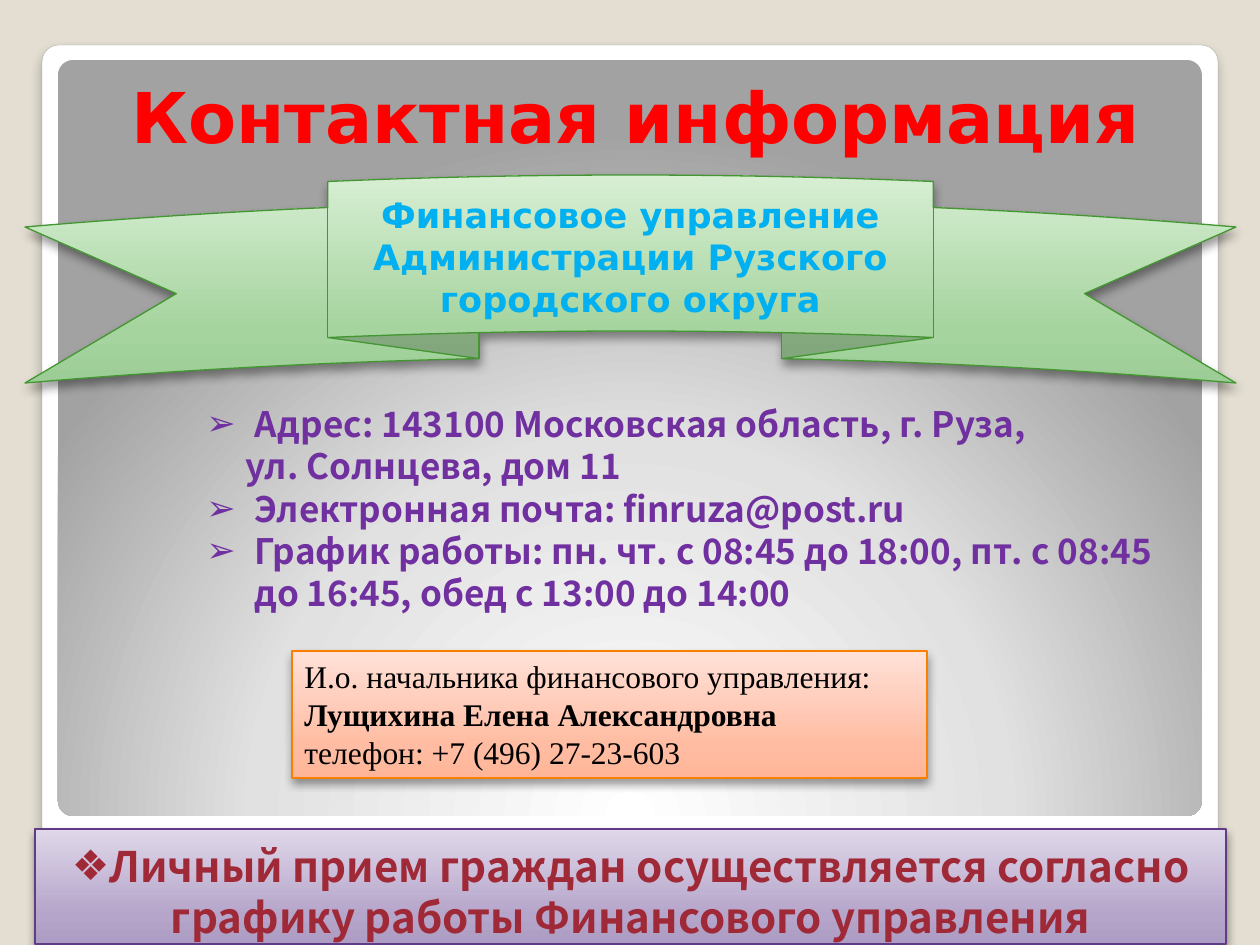
from lxml.etree import SubElement
from pptx import Presentation
from pptx.dml.color import RGBColor
from pptx.enum.shapes import MSO_SHAPE
from pptx.enum.text import MSO_ANCHOR, PP_ALIGN
from pptx.oxml.ns import qn
from pptx.util import Pt

PX = 914400 / 126

THEME = {
    "background": "E3DED1",
    "title": {"font": "DejaVu Sans", "size": 40, "color": "FF0000", "bold": True},
    "ribbon": {"font": "DejaVu Sans", "size": 20, "color": "00B0F0", "bold": True, "spacing": 24},
    "contacts": {"font": "Noto Sans CJK JP", "size": 20, "color": "7030A0", "bold": True, "spacing": 24},
    "head": {"font": "Times New Roman", "size": 18, "color": "000000", "spacing": 21.7},
    "reception": {"font": "Noto Sans CJK JP", "size": 24, "color": "9F2936", "bold": True, "spacing": 29},
    "frame": [(0, "FFFFFF"), (98, "FFFFFF"), (99, "F7F7F7"), (100, "DADADA")],
    "glow": [(0, "FFFFFF"), (55, "E1E1E1"), (100, "A2A2A2")],
    "green": [(0, "9DCD96"), (25, "A5D49E"), (100, "D7EED3")],
    "orange": [(0, "FFB598"), (25, "FFBCA2"), (100, "FFE1D8")],
    "purple": [(0, "AD9CC3"), (25, "B5A5CA"), (100, "DFD7E9")],
}


def add_panel(kind, place, stops, angle=270, line=None, line_width=0.75, shadow=None):
    """Add a gradient shape; angle None gives a radial glow, shadow is (alpha %, blur pt, distance pt)."""
    shape = page.shapes.add_shape(kind, *[round(n * PX) for n in place])
    shape.shadow.inherit = False
    shape.fill.gradient()
    gradient = shape._element.spPr.find(qn("a:gradFill"))
    for child in list(gradient):
        gradient.remove(child)
    stop_list = SubElement(gradient, qn("a:gsLst"))
    for position, color in stops:
        stop = SubElement(stop_list, qn("a:gs"), pos=str(position * 1000))
        SubElement(stop, qn("a:srgbClr"), val=color)
    if angle is None:
        circle = SubElement(gradient, qn("a:path"), path="circle")
        SubElement(circle, qn("a:fillToRect"), l="50000", t="175000", r="50000", b="-75000")
    else:
        SubElement(gradient, qn("a:lin"), ang=str(angle * 60000), scaled="0")
    if line:
        shape.line.color.rgb = RGBColor.from_string(line)
        shape.line.width = Pt(line_width)
    else:
        shape.line.fill.background()
    if shadow:
        alpha, blur, distance = shadow
        effects = shape._element.spPr.find(qn("a:effectLst"))
        outer = SubElement(effects, qn("a:outerShdw"), blurRad=str(Pt(blur)), dist=str(Pt(distance)),
                           dir="5400000", algn="ctr", rotWithShape="0")
        black = SubElement(outer, qn("a:srgbClr"), val="000000")
        SubElement(black, qn("a:alpha"), val=str(alpha * 1000))
    return shape


def write(frame, text, *, font, size, color, bold=False, spacing=None, align=PP_ALIGN.LEFT,
          bullet=None, margin=0, indent=0):
    """Write one paragraph, using the frame's first one while it is empty."""
    frame.word_wrap = True
    para = frame.paragraphs[0] if not frame.text else frame.add_paragraph()
    para.alignment = align
    properties = para._p.get_or_add_pPr()
    properties.set("marL", str(round(margin * PX)))
    properties.set("indent", str(round(indent * PX)))
    if bullet:
        SubElement(properties, qn("a:buFont"), typeface="DejaVu Sans")
        SubElement(properties, qn("a:buChar"), char=bullet)
    if spacing:
        para.line_spacing = Pt(spacing)
    span = para.add_run()
    span.text = text
    span.font.name = font
    span.font.size = Pt(size)
    span.font.bold = bold
    span.font.color.rgb = RGBColor.from_string(color)


deck = Presentation()
deck.slide_width = round(1260 * PX)
deck.slide_height = round(945 * PX)
page = deck.slides.add_slide(deck.slide_layouts[6])
page.background.fill.solid()
page.background.fill.fore_color.rgb = RGBColor.from_string(THEME["background"])

# Rounded frame with the grey glow inside
frame_panel = add_panel(MSO_SHAPE.ROUNDED_RECTANGLE, (42, 45, 1176, 854), THEME["frame"], angle=90,
                        line="A4A4A4", line_width=0.16, shadow=(25, 6, 4))
glow_panel = add_panel(MSO_SHAPE.ROUNDED_RECTANGLE, (58, 60, 1144, 756), THEME["glow"], angle=None)
for panel in (frame_panel, glow_panel):
    panel.adjustments[0] = 0.02

# Title
title = page.shapes.add_textbox(*[round(n * PX) for n in (95, 66, 1081, 98)])
title.text_frame.vertical_anchor = MSO_ANCHOR.BOTTOM
write(title.text_frame, "Контактная информация", align=PP_ALIGN.CENTER, **THEME["title"])

# Ribbon with the department's name
ribbon = add_panel(MSO_SHAPE.CURVED_UP_RIBBON, (25, 175, 1211, 208), THEME["green"],
                   line="439631", shadow=(40, 5.2, 3))
ribbon.text_frame.vertical_anchor = MSO_ANCHOR.MIDDLE
write(ribbon.text_frame, "Финансовое управление Администрации Рузского городского округа",
      align=PP_ALIGN.CENTER, **THEME["ribbon"])

# Contact list
contacts = page.shapes.add_textbox(*[round(n * PX) for n in (194, 393, 973, 224)])
contacts.text_frame.margin_top = round(10 * PX)
bulleted = {"bullet": "➢", "margin": 48, "indent": -48}
for text, layout in [
    ("Адрес: 143100 Московская область, г. Руза,", bulleted),
    ("ул. Солнцева, дом 11", {"margin": 39}),
    ("Электронная почта: finruza@post.ru", bulleted),
    ("График работы: пн. чт. с 08:45 до 18:00, пт. с 08:45 до 16:45, обед с 13:00 до 14:00", bulleted),
]:
    write(contacts.text_frame, text, **layout, **THEME["contacts"])

# Head of the department
head = add_panel(MSO_SHAPE.RECTANGLE, (292, 651, 635, 127), THEME["orange"],
                 line="F97F00", shadow=(40, 5.2, 3))
head.text_frame.vertical_anchor = MSO_ANCHOR.TOP
for text, bold in [
    ("И.о. начальника финансового управления:", False),
    ("Лущихина Елена Александровна", True),
    ("телефон: +7 (496) 27-23-603", False),
]:
    write(head.text_frame, text, bold=bold, **THEME["head"])

# Reception notice
reception = add_panel(MSO_SHAPE.RECTANGLE, (35, 829, 1191, 115), THEME["purple"],
                      line="603C84", shadow=(40, 5.2, 3))
reception.text_frame.vertical_anchor = MSO_ANCHOR.TOP
reception.text_frame.margin_top = round(11 * PX)
write(reception.text_frame,
      "Личный прием граждан осуществляется согласно графику работы Финансового управления",
      align=PP_ALIGN.CENTER, bullet="❖", **THEME["reception"])

deck.save("out.pptx")
